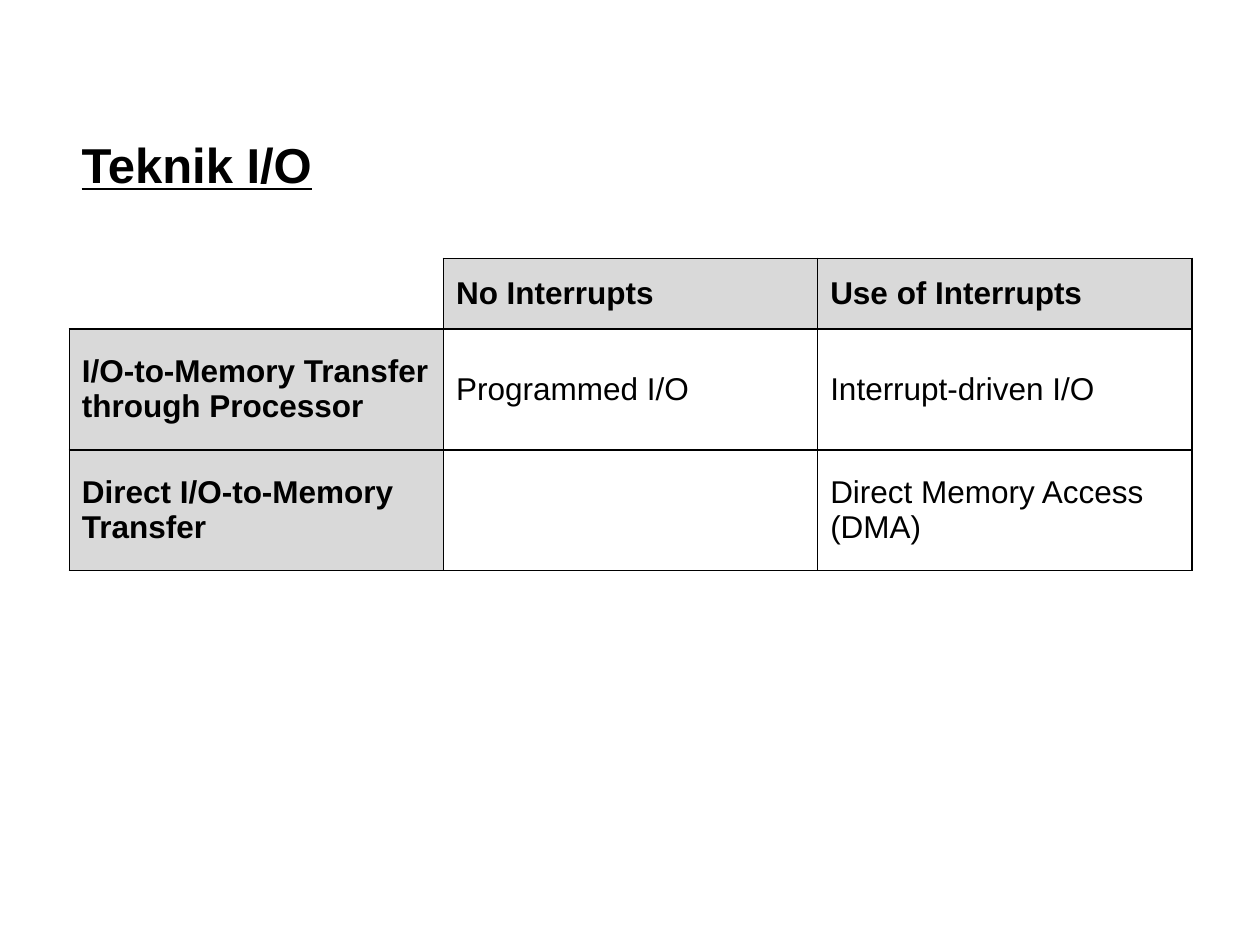
from dataclasses import dataclass

from lxml.etree import SubElement
from pptx import Presentation
from pptx.dml.color import RGBColor as Color
from pptx.enum.text import MSO_ANCHOR as Anchor, MSO_AUTO_SIZE as AutoSize
from pptx.oxml.ns import qn
from pptx.table import _Cell as Cell
from pptx.text.text import TextFrame
from pptx.util import Inches, Pt


@dataclass(frozen=True)
class Theme:
    font: str = "Arial"
    ink: str = "000000"
    header_fill: str = "D9D9D9"
    title_size: int = 28
    table_size: int = 18
    border_width: float = 1


@dataclass(frozen=True)
class TableCell:
    text: str = ""
    header: bool = False
    sides: str = "LRTB"


THEME = Theme()
LEFT = 0.55
COLUMN_WIDTH = 2.97
ROW_HEIGHTS = (0.56, 0.96, 0.96)
ROWS = (
    (
        TableCell(sides="RB"),
        TableCell("No Interrupts", header=True),
        TableCell("Use of Interrupts", header=True),
    ),
    (
        TableCell("I/O-to-Memory Transfer through Processor", header=True),
        TableCell("Programmed I/O"),
        TableCell("Interrupt-driven I/O"),
    ),
    (
        TableCell("Direct I/O-to-Memory Transfer", header=True),
        TableCell(),
        TableCell("Direct Memory Access (DMA)"),
    ),
)


def write_text(frame: TextFrame, text: str, *, size: float,
               bold: bool = False, underline: bool = False) -> None:
    span = frame.paragraphs[0].add_run()
    span.text = text
    font = span.font
    font.name = THEME.font
    font.size = Pt(size)
    font.bold = bold
    font.underline = underline
    font.color.rgb = Color.from_string(THEME.ink)


def draw_borders(cell: Cell, sides: str) -> None:
    properties = cell._tc.get_or_add_tcPr()
    for side in "LRTB":
        line = SubElement(properties, qn(f"a:ln{side}"))
        if side in sides:
            line.set("w", str(Pt(THEME.border_width)))
            fill = SubElement(line, qn("a:solidFill"))
            SubElement(fill, qn("a:srgbClr"), val=THEME.ink)
        else:
            SubElement(line, qn("a:noFill"))


def draw_cell(cell: Cell, content: TableCell) -> None:
    draw_borders(cell, content.sides)
    cell.vertical_anchor = Anchor.MIDDLE
    if content.header:
        cell.fill.solid()
        cell.fill.fore_color.rgb = Color.from_string(THEME.header_fill)
    else:
        cell.fill.background()
    if content.text:
        write_text(cell.text_frame, content.text,
                   size=THEME.table_size, bold=content.header)


def main() -> None:
    deck = Presentation()
    deck.slide_width, deck.slide_height = Inches(10), Inches(7.5)
    page = deck.slides.add_slide(deck.slide_layouts[6])

    table = page.shapes.add_table(
        len(ROWS), len(ROWS[0]), Inches(LEFT), Inches(2.05),
        Inches(COLUMN_WIDTH * len(ROWS[0])), Inches(sum(ROW_HEIGHTS)),
    ).table
    table.first_row = table.horz_banding = False
    for column in table.columns:
        column.width = Inches(COLUMN_WIDTH)
    for row, height, contents in zip(table.rows, ROW_HEIGHTS, ROWS):
        row.height = Inches(height)
        for cell, content in zip(row.cells, contents):
            draw_cell(cell, content)

    title = page.shapes.add_textbox(
        Inches(LEFT), Inches(1.02), Inches(2.1), Inches(0.57))
    frame = title.text_frame
    frame.word_wrap = False
    frame.auto_size = AutoSize.SHAPE_TO_FIT_TEXT
    write_text(frame, "Teknik I/O", size=THEME.title_size,
               bold=True, underline=True)

    deck.save("out.pptx")


if __name__ == "__main__":
    main()
